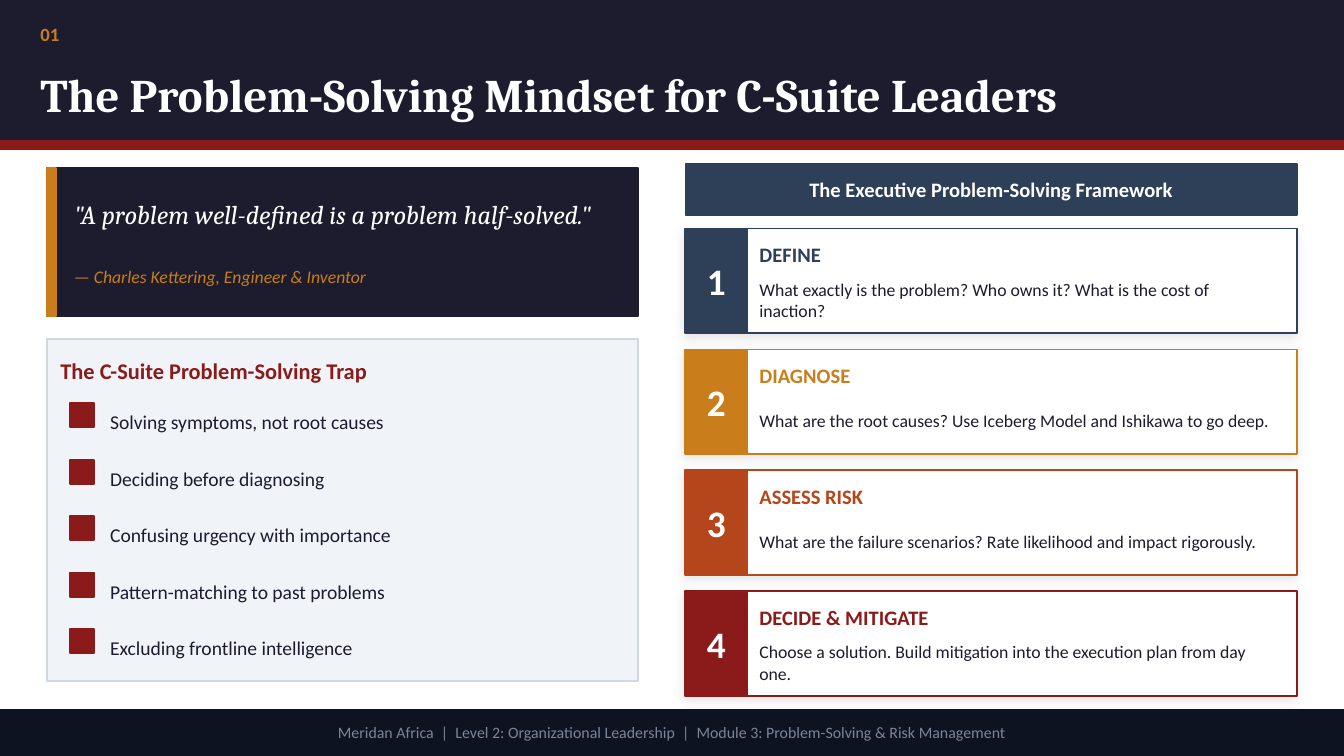
import lxml.etree
import pptx
import pptx.dml.color
import pptx.enum.shapes
import pptx.enum.text
import pptx.oxml.ns
import pptx.util

Inches = pptx.util.Inches
Pt = pptx.util.Pt
ALIGN = pptx.enum.text.PP_ALIGN
COLORS = {
    "white": "FFFFFF", "ink": "1C1C2E", "red": "8B1A1A", "gold": "C97D1B",
    "navy": "2E4057", "rust": "B5451B", "pale": "F0F4F8", "edge": "D0D8E4",
    "night": "0D1321", "gray": "7A8599", "black": "000000",
}
TRAPS = [
    "Solving symptoms, not root causes",
    "Deciding before diagnosing",
    "Confusing urgency with importance",
    "Pattern-matching to past problems",
    "Excluding frontline intelligence",
]
STEPS = [
    ("DEFINE", "navy",
     "What exactly is the problem? Who owns it? What is the cost of inaction?"),
    ("DIAGNOSE", "gold",
     "What are the root causes? Use Iceberg Model and Ishikawa to go deep."),
    ("ASSESS RISK", "rust",
     "What are the failure scenarios? Rate likelihood and impact rigorously."),
    ("DECIDE & MITIGATE", "red",
     "Choose a solution. Build mitigation into the execution plan from day one."),
]


def color(name):
    return pptx.dml.color.RGBColor.from_string(COLORS[name])


class Deck:
    """Holds the text style and the current slide; boxes are (x, y, w, h) in inches."""

    def __init__(self, slide, body="Calibri", head="Cambria"):
        self.slide = slide
        self.body = body
        self.head = head

    def rect(self, box, fill, line=None):
        shape = self.slide.shapes.add_shape(
            pptx.enum.shapes.MSO_SHAPE.RECTANGLE, *map(Inches, box))
        shape.shadow.inherit = False
        shape.fill.solid()
        shape.fill.fore_color.rgb = color(fill)
        shape.line.color.rgb = color(line or fill)
        shape.line.width = Pt(1)
        return shape

    def card(self, box, line):
        """Draw a white panel with a soft shadow."""
        shape = self.rect(box, "white", line)
        qn = pptx.oxml.ns.qn
        effects = shape.element.spPr.find(qn("a:effectLst"))
        shade = lxml.etree.SubElement(
            effects, qn("a:outerShdw"), blurRad=str(Pt(6)), dist=str(Pt(2)),
            dir=str(135 * 60000), algn="bl", rotWithShape="0")
        tint = lxml.etree.SubElement(shade, qn("a:srgbClr"), val=COLORS["black"])
        lxml.etree.SubElement(tint, qn("a:alpha"), val="10000")

    def text(self, box, words, size, tone, bold=False, italic=False,
             font=None, align=ALIGN.LEFT):
        frame = self.slide.shapes.add_textbox(*map(Inches, box)).text_frame
        frame.word_wrap = True
        frame.vertical_anchor = pptx.enum.text.MSO_ANCHOR.MIDDLE
        frame.margin_left = frame.margin_right = 0
        frame.margin_top = frame.margin_bottom = 0
        para = frame.paragraphs[0]
        para.alignment = align
        run = para.add_run()
        run.text = words
        run.font.name = font or self.body
        run.font.size = Pt(size)
        run.font.bold = bold
        run.font.italic = italic
        run.font.color.rgb = color(tone)

    def label(self, box, words, size, fill, tone="white", bold=True):
        """Draw a filled bar with centred text over it."""
        self.rect(box, fill)
        self.text(box, words, size, tone, bold=bold, align=ALIGN.CENTER)

    def trap(self, top, words):
        self.rect((0.52, top, 0.18, 0.18), "red")
        self.text((0.82, top - 0.03, 3.75, 0.34), words, 10.5, "ink")

    def step(self, top, num, title, tone, words):
        self.card((5.1, top, 4.55, 0.78), tone)
        self.label((5.1, top, 0.46, 0.78), str(num), 20, tone)
        self.text((5.65, top + 0.05, 3.85, 0.28), title, 11, tone, bold=True)
        self.text((5.65, top + 0.33, 3.85, 0.4), words, 9.5, "ink")


def main():
    show = pptx.Presentation()
    show.slide_width = Inches(10)
    show.slide_height = Inches(10 * 9 / 16)
    deck = Deck(show.slides.add_slide(show.slide_layouts[6]))

    # Header
    deck.rect((0, 0, 10, 1.05), "ink")
    deck.rect((0, 1.05, 10, 0.06), "red")
    deck.text((0.3, 0.08, 0.55, 0.35), "01", 10, "gold", bold=True)
    deck.text((0.3, 0.42, 9.4, 0.55),
              "The Problem-Solving Mindset for C-Suite Leaders",
              25, "white", bold=True, font=deck.head)

    # Quote
    deck.rect((0.35, 1.25, 4.4, 1.1), "ink")
    deck.rect((0.35, 1.25, 0.07, 1.1), "gold")
    deck.text((0.55, 1.3, 4.1, 0.58),
              '"A problem well-defined is a problem half-solved."',
              14, "white", italic=True, font=deck.head)
    deck.text((0.55, 1.88, 4.1, 0.35),
              "— Charles Kettering, Engineer & Inventor",
              9.5, "gold", italic=True)

    # Traps
    deck.rect((0.35, 2.52, 4.4, 2.55), "pale", "edge")
    deck.text((0.45, 2.6, 4.2, 0.32), "The C-Suite Problem-Solving Trap",
              12, "red", bold=True)
    for i, words in enumerate(TRAPS):
        deck.trap(3 + 0.42 * i, words)

    # Framework
    deck.label((5.1, 1.22, 4.55, 0.38),
               "The Executive Problem-Solving Framework", 11, "navy")
    for i, (title, tone, words) in enumerate(STEPS):
        deck.step(1.7 + 0.9 * i, i + 1, title, tone, words)

    # Footer
    deck.label((0, 5.28, 10, 0.34),
               "Meridan Africa  |  Level 2: Organizational Leadership  |  "
               "Module 3: Problem-Solving & Risk Management",
               8.5, "night", "gray", bold=False)

    show.save("out.pptx")


if __name__ == "__main__":
    main()
